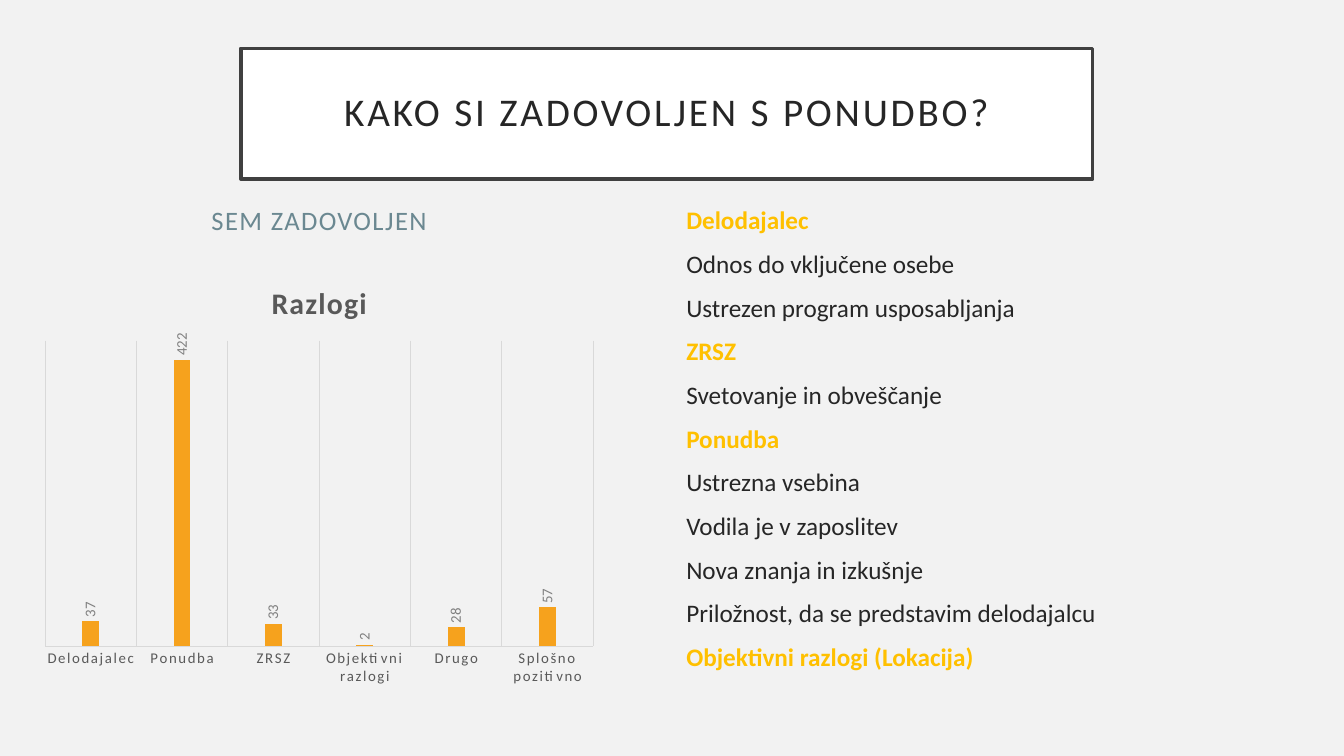
"""Build the satisfaction slide with its reasons chart and list."""
from dataclasses import dataclass

import lxml.etree
import pptx
import pptx.chart.data
import pptx.dml.color
import pptx.enum.chart
import pptx.enum.text
import pptx.oxml
import pptx.oxml.ns
import pptx.util

Pt = pptx.util.Pt
ALIGN = pptx.enum.text.PP_ALIGN
ANCHOR = pptx.enum.text.MSO_ANCHOR


@dataclass(frozen=True)
class Theme:
    """Hold the font, colours and type sizes."""
    font: str = "Calibri"
    background: str = "F2F2F2"
    panel: str = "FFFFFF"
    frame: str = "404040"
    text: str = "262626"
    subhead: str = "6B8891"
    accent: str = "FFC000"
    bar: str = "F6A21D"
    chart_text: str = "595959"
    label: str = "808080"
    grid: str = "D9D9D9"
    title_size: float = 28
    subhead_size: float = 19
    list_size: float = 18
    chart_title_size: float = 21.3
    chart_size: float = 10.6


THEME = Theme()

REASONS = [
    ("Delodajalec", 37),
    ("Ponudba", 422),
    ("ZRSZ", 33),
    ("Objektivni razlogi", 2),
    ("Drugo", 28),
    ("Splošno pozitivno", 57),
]

GROUPS = [
    ("Delodajalec", ["Odnos do vključene osebe", "Ustrezen program usposabljanja"]),
    ("ZRSZ", ["Svetovanje in obveščanje"]),
    ("Ponudba", ["Ustrezna vsebina", "Vodila je v zaposlitev", "Nova znanja in izkušnje",
                 "Priložnost, da se predstavim delodajalcu"]),
    ("Objektivni razlogi (Lokacija)", []),
]


def rgb(colour):
    """Return the colour object for a hex string."""
    return pptx.dml.color.RGBColor.from_string(colour)


def style_font(font, size, colour, bold=False, spacing=0):
    """Format a font, with letter spacing in points."""
    font.name = THEME.font
    font.size = Pt(size)
    font.bold = bold
    font.color.rgb = rgb(colour)
    if spacing:
        font._element.set("spc", str(round(spacing * 100)))


def style_line(line, colour, width):
    """Give a line its colour and width."""
    line.color.rgb = rgb(colour)
    line.width = Pt(width)


def place(sp, left, top, width, height, anchor, inset=None):
    """Move a placeholder and return its text frame."""
    sp.left, sp.top, sp.width, sp.height = Pt(left), Pt(top), Pt(width), Pt(height)
    tf = sp.text_frame
    tf.word_wrap = True
    tf.auto_size = pptx.enum.text.MSO_AUTO_SIZE.NONE
    tf.vertical_anchor = anchor
    if inset is not None:
        tf.margin_left = tf.margin_right = tf.margin_top = tf.margin_bottom = Pt(inset)
    return tf


def write_paragraph(p, text, align, line_spacing, before, **font):
    """Write one paragraph without a bullet."""
    p.alignment = align
    p.line_spacing = line_spacing
    p.space_before = Pt(before)
    p.space_after = Pt(0)
    pPr = p._p.get_or_add_pPr()
    pPr.set("marL", "0")
    pPr.set("indent", "0")
    lxml.etree.SubElement(pPr, pptx.oxml.ns.qn("a:buNone"))
    r = p.add_run()
    r.text = text
    style_font(r.font, **font)


def add_title(sp):
    """Fill the framed title."""
    tf = place(sp, 172, 34.5, 608.5, 93.5, ANCHOR.MIDDLE, 14.4)
    sp.fill.solid()
    sp.fill.fore_color.rgb = rgb(THEME.panel)
    style_line(sp.line, THEME.frame, 2.5)
    write_paragraph(tf.paragraphs[0], "KAKO SI ZADOVOLJEN S PONUDBO?", ALIGN.CENTER, 0.9, 0,
                    size=THEME.title_size, colour=THEME.text, spacing=2)


def add_subhead(sp):
    """Fill the heading above the chart."""
    tf = place(sp, 60, 142.5, 336, 30, ANCHOR.BOTTOM)
    write_paragraph(tf.paragraphs[0], "SEM ZADOVOLJEN", ALIGN.CENTER, 0.9, 10,
                    size=THEME.subhead_size, colour=THEME.subhead, spacing=1)


def add_reason_list(sp):
    """Fill the list of reasons under their headings."""
    tf = place(sp, 483, 142.5, 422.5, 376, ANCHOR.TOP)
    rows = [(text, text == head) for head, items in GROUPS for text in [head, *items]]
    for i, (text, is_head) in enumerate(rows):
        p = tf.add_paragraph() if i else tf.paragraphs[0]
        write_paragraph(p, text, ALIGN.LEFT, 1.0, 9.6, size=THEME.list_size,
                        colour=THEME.accent if is_head else THEME.text, bold=is_head)


def set_plot_area(chart, **fractions):
    """Fix the inner plot area as fractions of the chart."""
    ns = pptx.oxml.ns.nsdecls("c")
    values = "".join(f'<c:{key} val="{val}"/>' for key, val in fractions.items())
    layout = pptx.oxml.parse_xml(
        f'<c:layout {ns}><c:manualLayout><c:layoutTarget val="inner"/>'
        f'<c:xMode val="edge"/><c:yMode val="edge"/>{values}</c:manualLayout></c:layout>')
    area = chart._chartSpace.chart.plotArea
    for old in area.findall(pptx.oxml.ns.qn("c:layout")):
        area.remove(old)
    area.insert(0, layout)


def add_reason_chart(s):
    """Add the column chart of reasons."""
    data = pptx.chart.data.CategoryChartData()
    data.categories = [name for name, _ in REASONS]
    data.add_series("Razlogi", [count for _, count in REASONS])
    chart = s.shapes.add_chart(pptx.enum.chart.XL_CHART_TYPE.COLUMN_CLUSTERED,
                               Pt(24), Pt(188), Pt(408), Pt(307.5), data).chart
    style_font(chart.font, THEME.chart_size, THEME.chart_text)
    chart.has_legend = False
    chart.has_title = True
    r = chart.chart_title.text_frame.paragraphs[0].add_run()
    r.text = "Razlogi"
    style_font(r.font, THEME.chart_title_size, THEME.chart_text, True, 1)
    chart.chart_title.include_in_layout = False
    set_plot_area(chart, x=0.02, y=0.18, w=0.96, h=0.71)

    axis = chart.category_axis
    axis.major_tick_mark = pptx.enum.chart.XL_TICK_MARK.NONE
    axis.has_major_gridlines = True
    style_line(axis.format.line, THEME.grid, 0.75)
    style_line(axis.major_gridlines.format.line, THEME.grid, 0.75)
    style_font(axis.tick_labels.font, THEME.chart_size, THEME.chart_text, spacing=1.2)
    chart.value_axis.has_major_gridlines = False
    chart.value_axis.minimum_scale = 0
    chart.value_axis.maximum_scale = 450
    chart.value_axis.visible = False

    plot = chart.plots[0]
    plot.vary_by_categories = False
    plot.gap_width = 444
    plot.overlap = -90
    series = plot.series[0]
    series.format.fill.solid()
    series.format.fill.fore_color.rgb = rgb(THEME.bar)
    labels = series.data_labels
    labels.show_value = True
    labels.position = pptx.enum.chart.XL_LABEL_POSITION.OUTSIDE_END
    style_font(labels.font, THEME.chart_size, THEME.label)
    body = labels._element.find(".//" + pptx.oxml.ns.qn("a:bodyPr"))
    body.set("rot", "-5400000")
    body.set("vert", "horz")


def main():
    """Build and save the slide."""
    prs = pptx.Presentation()
    prs.slide_width, prs.slide_height = Pt(960), Pt(540)
    s = prs.slides.add_slide(prs.slide_layouts[3])
    s.background.fill.solid()
    s.background.fill.fore_color.rgb = rgb(THEME.background)
    add_title(s.shapes.title)
    add_subhead(s.placeholders[1])
    add_reason_list(s.placeholders[2])
    add_reason_chart(s)
    prs.save("out.pptx")


if __name__ == "__main__":
    main()
